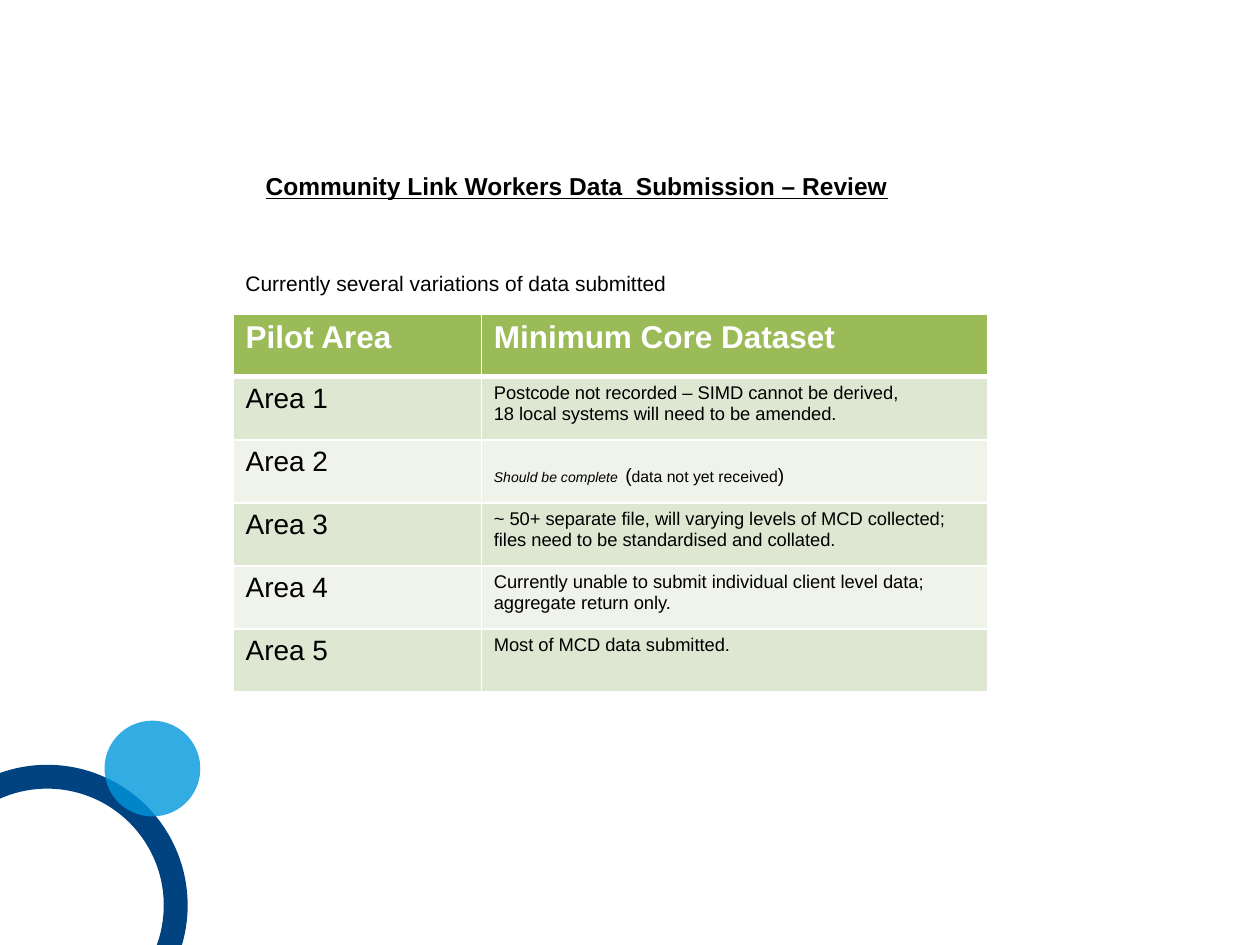
"""Build the Community Link Workers data submission review slide."""
from lxml.etree import SubElement
from pptx import Presentation
from pptx.dml.color import RGBColor
from pptx.enum.shapes import MSO_SHAPE
from pptx.oxml.ns import qn
from pptx.util import Inches, Pt

COLORS = {"navy": "004380", "sky": "0096DC", "header": "9BBB59", "dark_band": "DEE7D1",
          "light_band": "EFF3EA", "white": "FFFFFF", "black": "000000"}
FONT = "Arial"
SPACE_FONT = "Noto Sans CJK JP"

TITLE = "Community Link Workers Data  Submission – Review"
INTRO = "Currently several variations of data submitted"
HEADERS = ("Pilot Area", "Minimum Core Dataset")
AREAS = [
    ("Area 1", [[("Postcode not recorded – SIMD cannot be derived,", 10.5)],
                [("18 local systems will need to be amended.", 10.5)]]),
    ("Area 2", [[("Should be complete", 8, {"italic": True}),
                 (" ", 18, {"name": SPACE_FONT}),
                 ("(", 11), ("data not yet received", 9), (")", 11)]]),
    ("Area 3", [[("~ 50+ separate file, will varying levels of MCD collected; "
                  "files need to be standardised and collated.", 10.5)]]),
    ("Area 4", [[("Currently unable to submit individual client level data; "
                  "aggregate return only.", 10.5)]]),
    ("Area 5", [[("Most of MCD data submitted.", 10.5)]]),
]
COLUMN_WIDTHS = (1.97, 4.02)
ROW_HEIGHT = 0.5
AREA_2_SPACE_AFTER = 8


def rgb(name):
    return RGBColor.from_string(COLORS[name])


def add_span(paragraph, text, size, style=None, color="black"):
    span = paragraph.add_run()
    span.text = text
    span.font.size = Pt(size)
    span.font.color.rgb = rgb(color)
    settings = {"name": FONT, "bold": False, **(style or {})}
    for key, value in settings.items():
        setattr(span.font, key, value)
    if settings["name"] != FONT:
        properties = span.font._element
        for tag in ("a:ea", "a:cs"):
            SubElement(properties, qn(tag), typeface=settings["name"])


def add_text(page, place, text, size, style=None, wrap=True):
    box = page.shapes.add_textbox(*map(Inches, place))
    box.text_frame.word_wrap = wrap
    add_span(box.text_frame.paragraphs[0], text, size, style)


def add_decoration(page, kind, place, color):
    shape = page.shapes.add_shape(kind, *map(Inches, place))
    shape.shadow.inherit = False
    shape.fill.solid()
    shape.fill.fore_color.rgb = rgb(color)
    shape.line.fill.background()
    return shape


def style_cell(cell, fill, bottom_width=1, top_width=1):
    properties = cell._tc.get_or_add_tcPr()
    widths = {"a:lnL": 1, "a:lnR": 1, "a:lnT": top_width, "a:lnB": bottom_width}
    for tag, width in widths.items():
        border = SubElement(properties, qn(tag), w=str(Pt(width)))
        paint = SubElement(border, qn("a:solidFill"))
        SubElement(paint, qn("a:srgbClr"), val=COLORS["white"])
    cell.fill.solid()
    cell.fill.fore_color.rgb = rgb(fill)


def add_area_table(page):
    rows = len(AREAS) + 1
    frame = page.shapes.add_table(rows, len(HEADERS), Inches(1.85), Inches(2.49),
                                  Inches(sum(COLUMN_WIDTHS)), Inches(rows * ROW_HEIGHT))
    table = frame.table
    for column, width in zip(table.columns, COLUMN_WIDTHS):
        column.width = Inches(width)
    for index, header in enumerate(HEADERS):
        cell = table.cell(0, index)
        style_cell(cell, "header", bottom_width=3)
        add_span(cell.text_frame.paragraphs[0], header, 18, {"bold": True}, "white")
    for row, (area, paragraphs) in enumerate(AREAS, 1):
        band = "dark_band" if row % 2 else "light_band"
        for column, content in enumerate(([[(area, 16)]], paragraphs)):
            cell = table.cell(row, column)
            style_cell(cell, band, top_width=3 if row == 1 else 1)
            for index, spans in enumerate(content):
                text = cell.text_frame
                paragraph = text.add_paragraph() if index else text.paragraphs[0]
                for span in spans:
                    add_span(paragraph, *span)
    table.cell(2, 1).text_frame.paragraphs[0].space_after = Pt(AREA_2_SPACE_AFTER)


def main():
    deck = Presentation()
    deck.slide_width, deck.slide_height = Inches(10), Inches(7.5)
    page = deck.slides.add_slide(deck.slide_layouts[6])
    ring = add_decoration(page, MSO_SHAPE.DONUT, (-0.74, 6.07, 2.23, 2.23), "navy")
    ring.adjustments[0] = 0.085
    dot = add_decoration(page, MSO_SHAPE.OVAL, (0.83, 5.72, 0.76, 0.76), "sky")
    SubElement(dot.fill._xPr.find(".//" + qn("a:srgbClr")), qn("a:alpha"), val="80000")
    add_area_table(page)
    add_text(page, (2.01, 1.31, 5.75, 0.34), TITLE, 14, {"bold": True, "underline": True})
    add_text(page, (1.85, 2.1, 3.57, 0.3), INTRO, 12, wrap=False)
    deck.save("out.pptx")


if __name__ == "__main__":
    main()
